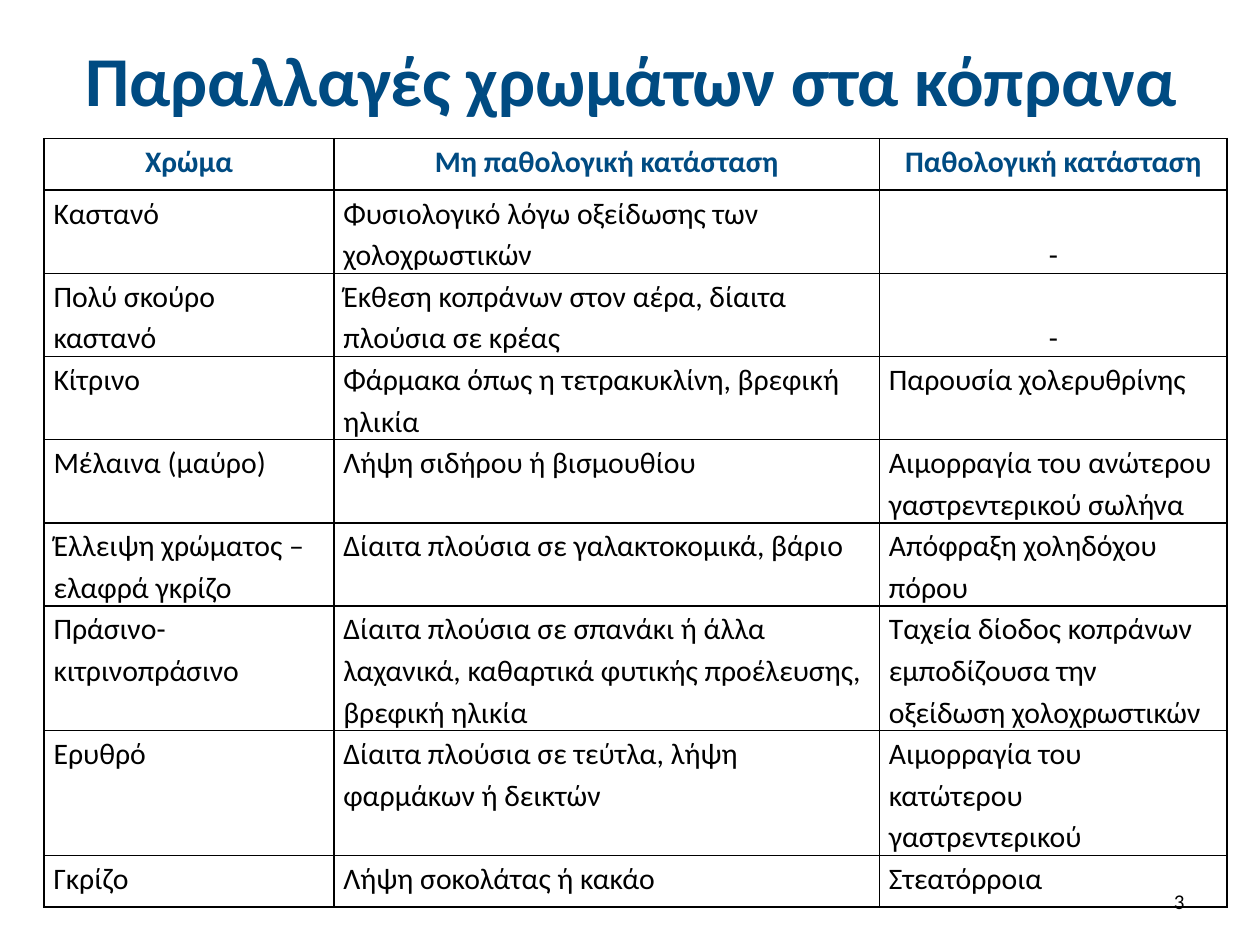
import pptx
import pptx.dml.color
import pptx.enum.lang
import pptx.enum.text
import pptx.oxml
import pptx.oxml.ns
import pptx.util
from pptx.util import Inches

COLORS = {"heading": "004B82", "text": "000000", "border": "000000"}
ALIGN = pptx.enum.text.PP_ALIGN
ANCHOR = pptx.enum.text.MSO_ANCHOR
NS = pptx.oxml.ns.nsdecls("a")

HEADERS = ["Χρώμα", "Μη παθολογική κατάσταση", "Παθολογική κατάσταση"]
STOOL_COLORS = [
    ["Καστανό", "Φυσιολογικό λόγω οξείδωσης των χολοχρωστικών", "-"],
    ["Πολύ σκούρο καστανό",
     "Έκθεση κοπράνων στον αέρα, δίαιτα πλούσια σε κρέας", "-"],
    ["Κίτρινο", "Φάρμακα όπως η τετρακυκλίνη, βρεφική ηλικία",
     "Παρουσία χολερυθρίνης"],
    ["Μέλαινα (μαύρο)", "Λήψη σιδήρου ή βισμουθίου",
     "Αιμορραγία του ανώτερου γαστρεντερικού σωλήνα"],
    ["Έλλειψη χρώματος – ελαφρά γκρίζο",
     "Δίαιτα πλούσια σε γαλακτοκομικά, βάριο", "Απόφραξη χοληδόχου πόρου"],
    ["Πράσινο- κιτρινοπράσινο",
     "Δίαιτα πλούσια σε σπανάκι ή άλλα λαχανικά, καθαρτικά φυτικής "
     "προέλευσης, βρεφική ηλικία",
     "Ταχεία δίοδος κοπράνων εμποδίζουσα την οξείδωση χολοχρωστικών"],
    ["Ερυθρό", "Δίαιτα πλούσια σε τεύτλα, λήψη φαρμάκων ή δεικτών",
     "Αιμορραγία του κατώτερου γαστρεντερικού"],
    ["Γκρίζο", "Λήψη σοκολάτας ή κακάο", "Στεατόρροια"],
]
ONE_LINE, TWO_LINES, THREE_LINES = 0.41, 0.66, 0.99
ROW_HEIGHTS = [ONE_LINE] + [TWO_LINES] * 5 + [THREE_LINES] * 2 + [ONE_LINE]


class SlideBuilder:
    """Adds styled elements to the current slide."""

    font = "Calibri"
    table_size = 17

    def __init__(self, prs):
        self.slide = prs.slides.add_slide(prs.slide_layouts[6])

    def run(self, p, text, size, color, bold=False):
        r = p.add_run()
        r.text = text
        r.font.name = self.font
        r.font.size = pptx.util.Pt(size)
        r.font.bold = bold
        r.font.language_id = pptx.enum.lang.MSO_LANGUAGE_ID.GREEK
        r.font.color.rgb = pptx.dml.color.RGBColor.from_string(COLORS[color])
        for script in ("ea", "cs"):
            r._r.get_or_add_rPr().append(pptx.oxml.parse_xml(
                f'<a:{script} {NS} typeface="{self.font}"/>'))

    def text(self, box, text, size, color, align, bold=False):
        sp = self.slide.shapes.add_textbox(*map(Inches, box))
        tf = sp.text_frame
        tf.word_wrap = True
        tf.vertical_anchor = ANCHOR.MIDDLE
        p = tf.paragraphs[0]
        p.alignment = align
        self.run(p, text, size, color, bold)

    def borders(self, cell):
        """Draw a 1 pt line on every side; lines must precede the fill."""
        tc_pr = cell._tc.get_or_add_tcPr()
        for i, side in enumerate(("lnL", "lnR", "lnT", "lnB")):
            tc_pr.insert(i, pptx.oxml.parse_xml(
                f'<a:{side} {NS} w="12700"><a:solidFill>'
                f'<a:srgbClr val="{COLORS["border"]}"/></a:solidFill></a:{side}>'))

    def cell(self, cell, text, header):
        cell.margin_left = cell.margin_right = Inches(0.075)
        cell.margin_top = cell.margin_bottom = 0
        cell.fill.background()
        self.borders(cell)
        p = cell.text_frame.paragraphs[0]
        p.line_spacing = 1.15
        empty = text == "-"
        p.alignment = ALIGN.CENTER if header or empty else ALIGN.LEFT
        cell.vertical_anchor = ANCHOR.BOTTOM if empty else ANCHOR.TOP
        self.run(p, text, self.table_size, "heading" if header else "text", header)

    def table(self, left, top, widths, heights, rows):
        table = self.slide.shapes.add_table(
            len(rows), len(widths), Inches(left), Inches(top),
            Inches(sum(widths)), Inches(sum(heights))).table
        table.first_row = table.horz_banding = False
        for column, width in zip(table.columns, widths):
            column.width = Inches(width)
        for i, (row, height) in enumerate(zip(rows, heights)):
            table.rows[i].height = Inches(height)
            for j, text in enumerate(row):
                self.cell(table.cell(i, j), text, header=i == 0)


def main():
    prs = pptx.Presentation()
    prs.slide_width, prs.slide_height = Inches(10), Inches(7.5)
    s = SlideBuilder(prs)
    s.text((0.51, 0.13, 9, 0.99), "Παραλλαγές χρωμάτων στα κόπρανα",
           40, "heading", ALIGN.CENTER, bold=True)
    s.table(0.35, 1.1, [2.3, 4.33, 2.76], ROW_HEIGHTS, [HEADERS] + STOOL_COLORS)
    s.text((7.17, 6.95, 2.33, 0.4), "3", 12, "text", ALIGN.RIGHT)
    prs.save("out.pptx")


if __name__ == "__main__":
    main()
